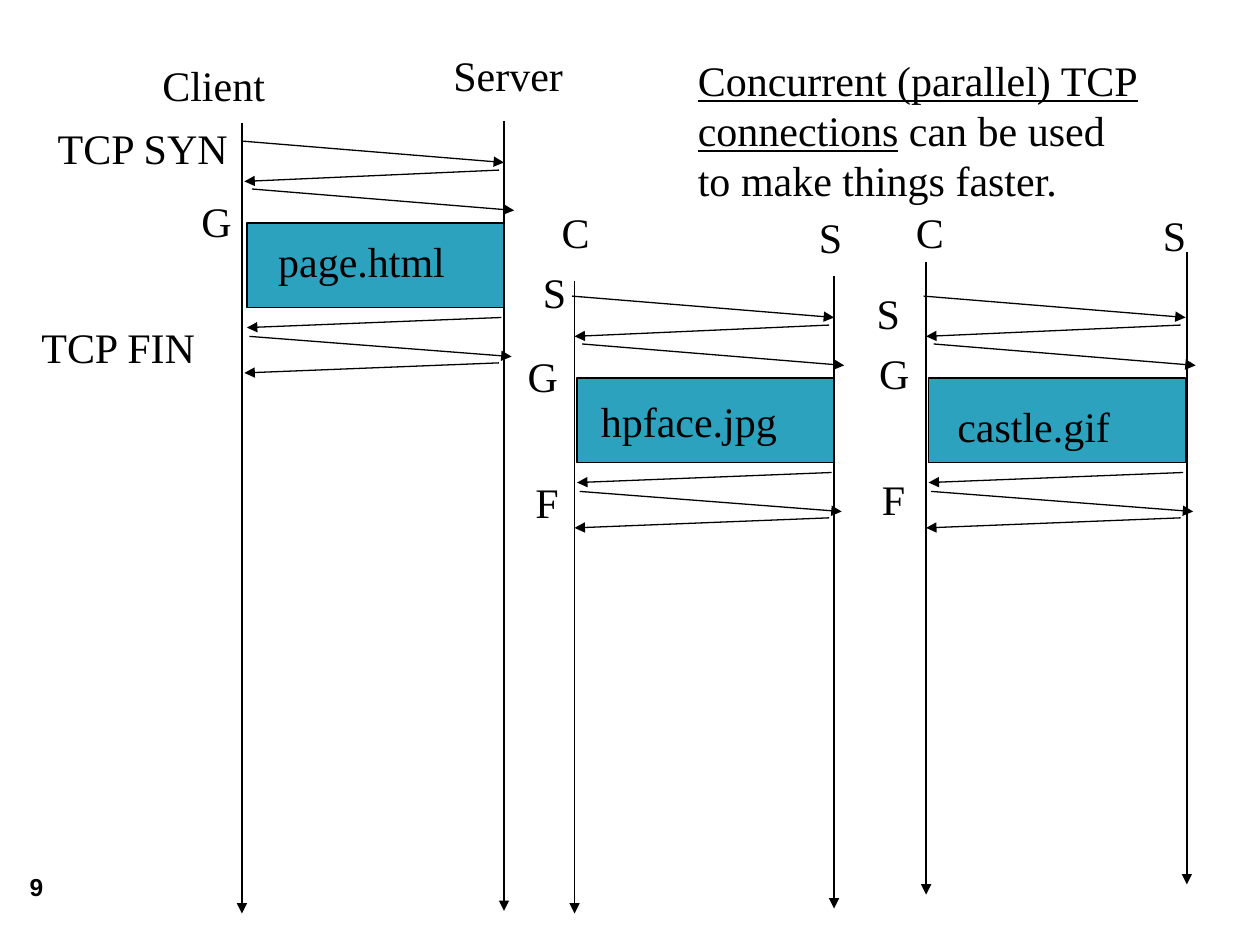
"""Build a slide of concurrent TCP connections as client/server timelines."""
from dataclasses import dataclass

from lxml import etree
from pptx import Presentation
from pptx import util as u
from pptx.dml.color import RGBColor
from pptx.enum import shapes, text
from pptx.oxml.ns import qn


@dataclass(frozen=True)
class Theme:
    ink: RGBColor = RGBColor(0, 0, 0)
    fill: RGBColor = RGBColor(0x2D, 0xA2, 0xBF)
    font: str = "Times New Roman"
    number_font: str = "Arial"
    size: int = 24
    number_size: int = 14
    line: float = 0.75


T = Theme()
LABEL_H = 0.5
TIMELINES = [
    (1.92, 0.98, 6.27), (4, 0.96, 6.27),
    (4.56, 2.23, 5.02), (6.62, 2.19, 5.02),
    (7.35, 2.08, 5.02), (9.42, 2, 5.02),
]
ARROWS = [
    (0, 0, 2.08, 0.17), (2.04, 0.23, 0.02, 0.32), (0.08, 0.38, 2.16, 0.55),
    (2.06, 1.4, 0.04, 1.48), (0.06, 1.55, 2.14, 1.71), (2.04, 1.76, 0.02, 1.84),
]
RESPONSE = (0.04, 0.65, 2.04, 0.67)
EXCHANGES = [
    ((1.92, 1.12), [("TCP SYN", 0.36, 0.92, 1.58), ("G", 1.5, 1.5, 0.44),
                    ("page.html", 2.11, 1.82, 1.56), ("TCP FIN", 0.23, 2.5, 1.45)]),
    ((7.33, 2.35), [("S", 6.86, 2.23, 0.39), ("G", 6.88, 2.71, 0.44),
                    ("castle.gif", 7.5, 3.13, 1.43), ("F", 6.9, 3.71, 0.39)]),
    ((4.54, 2.35), [("S", 4.21, 2.07, 0.39), ("G", 4.09, 2.73, 0.44),
                    ("hpface.jpg", 4.67, 3.09, 1.62), ("F", 4.15, 3.73, 0.39)]),
]
ENDPOINTS = [
    ("Client", 1.19, 0.42, 1.05), ("Server", 3.5, 0.34, 1.09),
    ("C", 4.36, 1.59, 0.42), ("S", 6.4, 1.63, 0.39),
    ("C", 7.17, 1.59, 0.42), ("S", 9.13, 1.61, 0.39),
]
MESSAGE = [
    [("Concurrent (parallel) TCP", True)],
    [("connections", True), (" can be used", False)],
    [("to make things faster.", False)],
]


def inches(*values):
    return [u.Inches(v) for v in values]


def add_arrow(parent, x1, y1, x2, y2):
    c = parent.add_connector(shapes.MSO_CONNECTOR.STRAIGHT, *inches(x1, y1, x2, y2))
    c.line.color.rgb = T.ink
    c.line.width = u.Pt(T.line)
    etree.SubElement(c.line._get_or_add_ln(), qn("a:tailEnd"), type="triangle")
    etree.SubElement(c._element.spPr, qn("a:effectLst"))


def add_text(parent, paragraphs, box, font=T.font, size=T.size, bold=False):
    tf = parent.add_textbox(*inches(*box)).text_frame
    tf.word_wrap = False
    tf.auto_size = text.MSO_AUTO_SIZE.SHAPE_TO_FIT_TEXT
    for i, runs in enumerate(paragraphs):
        p = tf.add_paragraph() if i else tf.paragraphs[0]
        p.font.name, p.font.size, p.font.bold = font, u.Pt(size), bold
        p.font.color.rgb = T.ink
        for words, underlined in runs:
            r = p.add_run()
            r.text = words
            if underlined:
                r.font.underline = True
    return tf


def add_label(parent, words, x, y, w):
    add_text(parent, [[(words, False)]], (x, y, w, LABEL_H))


def add_exchange(parent, origin, labels):
    x, y = origin
    group = parent.add_group_shape().shapes
    for x1, y1, x2, y2 in ARROWS:
        add_arrow(group, x + x1, y + y1, x + x2, y + y2)
    dx, dy, w, h = RESPONSE
    sp = group.add_shape(shapes.MSO_SHAPE.RECTANGLE, *inches(x + dx, y + dy, w, h))
    sp.shadow.inherit = False
    sp.fill.solid()
    sp.fill.fore_color.rgb = T.fill
    sp.line.color.rgb = T.ink
    sp.line.width = u.Pt(T.line)
    for label in labels:
        add_label(group, *label)


def main():
    prs = Presentation()
    prs.slide_width, prs.slide_height = inches(10, 7.5)
    s = prs.slides.add_slide(prs.slide_layouts[6]).shapes
    for x, top, length in TIMELINES:
        add_arrow(s, x, top, x, top + length)
    for exchange in EXCHANGES:
        add_exchange(s, *exchange)
    for label in ENDPOINTS:
        add_label(s, *label)
    add_text(s, MESSAGE, (5.44, 0.38, 3.72, 1.3))
    tf = add_text(s, [[("9", False)]], (0, 6.83, 0.58, 0.42),
                  T.number_font, T.number_size, True)
    tf.auto_size = text.MSO_AUTO_SIZE.NONE
    tf.word_wrap = True
    tf.vertical_anchor = text.MSO_ANCHOR.MIDDLE
    tf.paragraphs[0].alignment = text.PP_ALIGN.CENTER
    prs.save("out.pptx")


if __name__ == "__main__":
    main()
